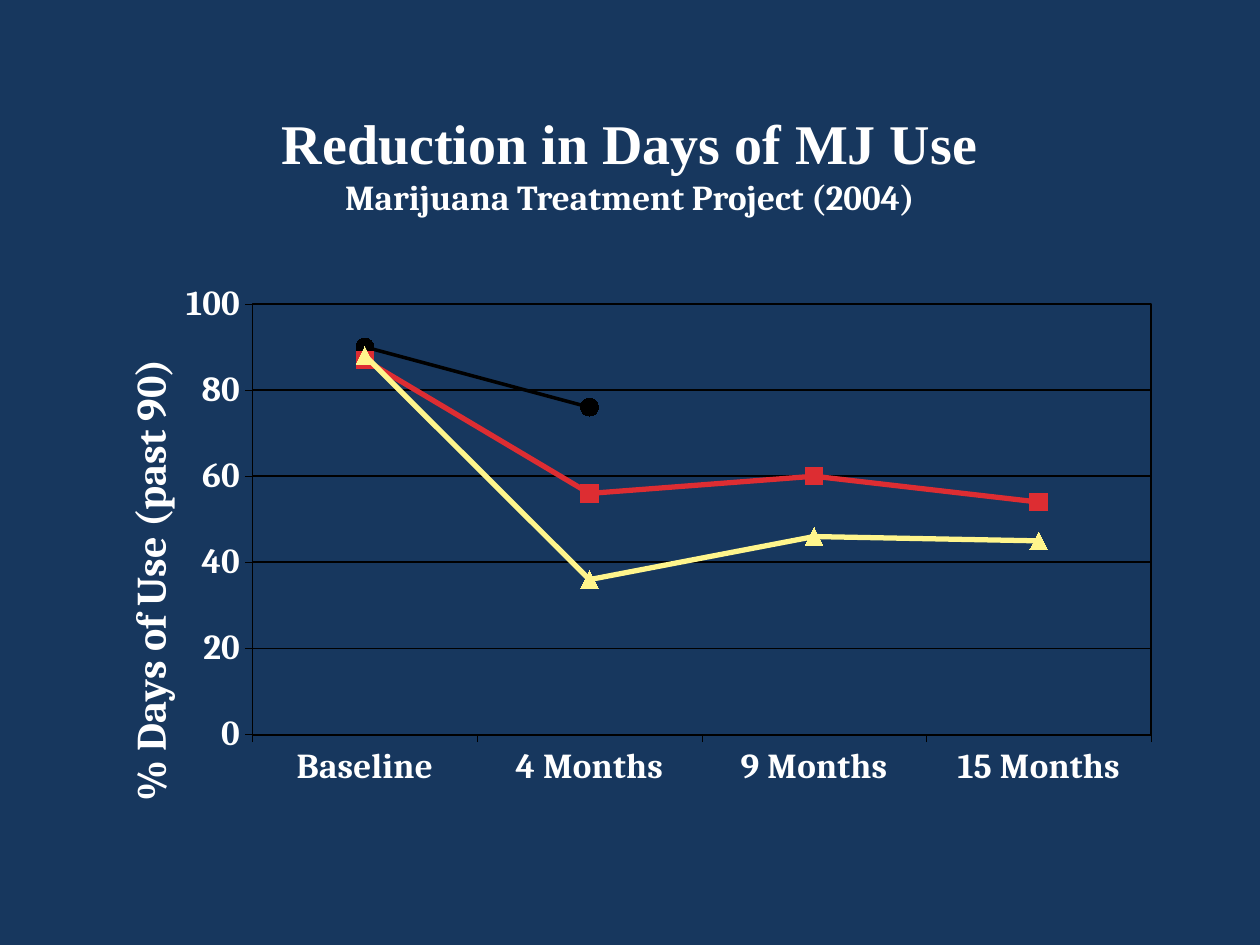
from dataclasses import dataclass

from lxml.etree import SubElement
from pptx import Presentation
from pptx.chart.data import CategoryChartData
from pptx.dml.color import RGBColor
from pptx.enum.chart import XL_CHART_TYPE, XL_MARKER_STYLE, XL_TICK_MARK
from pptx.enum.text import MSO_ANCHOR, PP_ALIGN
from pptx.oxml import parse_xml
from pptx.oxml.ns import nsdecls, qn
from pptx.util import Inches, Pt


@dataclass(frozen=True)
class Theme:
    background: str = "17375E"
    text: str = "FFFFFF"
    rule: str = "000000"
    black: str = "000000"
    red: str = "DD2D32"
    yellow: str = "FFF58C"
    heading_font: str = "Times New Roman"
    body_font: str = "Cambria"
    heading: int = 32
    axis_title: int = 24
    body: int = 20


THEME = Theme()
TITLE_LINES = [
    ("Reduction in Days of MJ Use", THEME.heading_font, THEME.heading),
    ("Marijuana Treatment Project (2004)", THEME.body_font, THEME.body),
]
VALUE_TITLE = "% Days of Use (past 90)"
CATEGORIES = ["Baseline", "4 Months", "9 Months", "15 Months"]
# values, colour, line width, marker
SERIES = [
    ([90, 76, None, None], THEME.black, 2, XL_MARKER_STYLE.CIRCLE),
    ([87, 56, 60, 54], THEME.red, 3, XL_MARKER_STYLE.SQUARE),
    ([88, 36, 46, 45], THEME.yellow, 3, XL_MARKER_STYLE.TRIANGLE),
]
TITLE_BOX = [Inches(v) for v in (0.75, 0.67, 8.5, 1.25)]
CHART_BOX = [Inches(v) for v in (0.83, 2.08, 8.39, 4.75)]
# Shares of the chart's width and height
PLOT_LAYOUT = {"x": 0.14, "y": 0.07, "w": 0.85, "h": 0.72}
AXIS_TITLE_LAYOUT = {"x": 0.01, "y": 0.15}


def rgb(color):
    return RGBColor.from_string(color)


def style_font(font, size, name=THEME.body_font):
    font.name, font.size, font.bold = name, Pt(size), True
    font.color.rgb = rgb(THEME.text)


def style_line(line, color, width):
    line.color.rgb = rgb(color)
    line.width = Pt(width)


def place(element, index, shares):
    """Give a chart element a manual layout, as its child at index."""
    for old in element.findall(qn("c:layout")):
        element.remove(old)
    layout = parse_xml(f"<c:layout {nsdecls('c')}/>")
    manual = SubElement(layout, qn("c:manualLayout"))
    settings = {"layoutTarget": "inner"} if "w" in shares else {}
    settings |= {"xMode": "edge", "yMode": "edge"} | shares
    for tag, value in settings.items():
        SubElement(manual, qn(f"c:{tag}")).set("val", str(value))
    element.insert(index, layout)


def add_title(slide):
    title = slide.shapes.title
    title.left, title.top, title.width, title.height = TITLE_BOX
    tf = title.text_frame
    tf.word_wrap = True
    tf.vertical_anchor = MSO_ANCHOR.MIDDLE
    p = tf.paragraphs[0]
    p.alignment = PP_ALIGN.CENTER
    for i, (text, font, size) in enumerate(TITLE_LINES):
        if i:
            p.add_line_break()
        r = p.add_run()
        r.text = text
        style_font(r.font, size, font)


def style_axes(chart):
    for axis in (chart.category_axis, chart.value_axis):
        axis.major_tick_mark = XL_TICK_MARK.OUTSIDE
        axis.minor_tick_mark = XL_TICK_MARK.NONE
        style_font(axis.tick_labels.font, THEME.body)
        style_line(axis.format.line, THEME.rule, 0.25)

    values = chart.value_axis
    values.minimum_scale, values.maximum_scale, values.major_unit = 0, 100, 20
    values.has_major_gridlines = True
    style_line(values.major_gridlines.format.line, THEME.rule, 1)
    title = values.axis_title
    tf = title.text_frame
    tf.text = VALUE_TITLE
    style_font(tf.paragraphs[0].font, THEME.axis_title)
    body = title._element.find(".//" + qn("a:bodyPr"))
    body.set("rot", "-5400000")
    body.set("vert", "horz")
    place(title._element, 1, AXIS_TITLE_LAYOUT)


def add_chart(slide):
    data = CategoryChartData()
    data.categories = CATEGORIES
    for values, *_ in SERIES:
        data.add_series("", values)
    chart = slide.shapes.add_chart(XL_CHART_TYPE.LINE_MARKERS, *CHART_BOX, data).chart
    chart.has_title = False
    chart.has_legend = False
    style_font(chart.font, THEME.body)
    style_axes(chart)

    plot = chart.plots[0]
    plot.vary_by_categories = False
    for series, (_, color, width, marker) in zip(plot.series, SERIES):
        series.smooth = False
        style_line(series.format.line, color, width)
        series.marker.style = marker
        series.marker.size = 10
        series.marker.format.fill.solid()
        series.marker.format.fill.fore_color.rgb = rgb(color)
        style_line(series.marker.format.line, color, 0.75)

    area = chart._chartSpace.chart.plotArea
    place(area, 0, PLOT_LAYOUT)
    area.append(parse_xml(
        f"<c:spPr {nsdecls('c', 'a')}><a:noFill/><a:ln w=\"{Pt(1)}\"><a:solidFill>"
        f"<a:srgbClr val=\"{THEME.rule}\"/></a:solidFill></a:ln></c:spPr>"))


def main():
    prs = Presentation()
    prs.slide_width, prs.slide_height = Inches(10), Inches(7.5)
    slide = prs.slides.add_slide(prs.slide_layouts.get_by_name("Title Only"))
    slide.background.fill.solid()
    slide.background.fill.fore_color.rgb = rgb(THEME.background)
    add_title(slide)
    add_chart(slide)
    prs.save("out.pptx")


if __name__ == "__main__":
    main()
